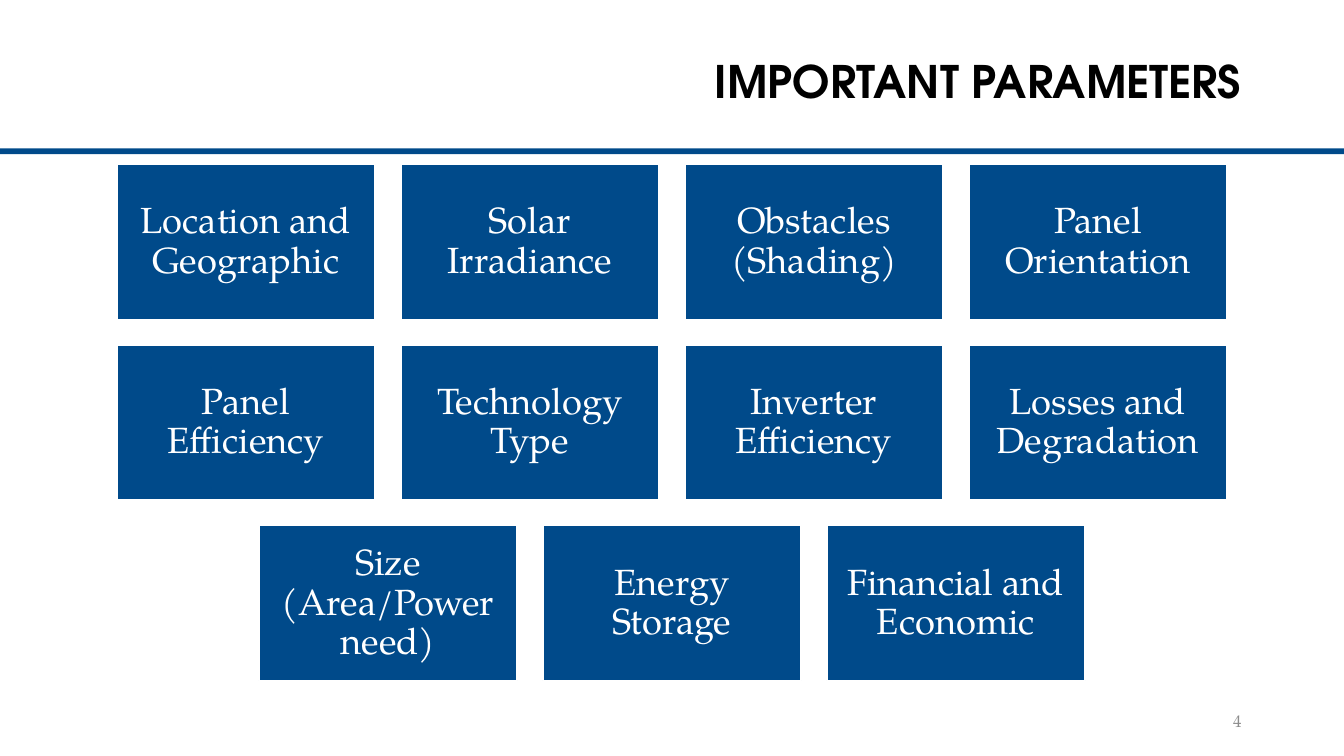
from pptx import Presentation
from pptx.dml.color import RGBColor
from pptx.enum.shapes import MSO_SHAPE as Shape
from pptx.enum.text import MSO_ANCHOR as Anchor, PP_ALIGN as Align
from pptx.util import Pt

NAVY = RGBColor(0x00, 0x4A, 0x8A)
WHITE = RGBColor(0xFF, 0xFF, 0xFF)
BLACK = RGBColor(0x00, 0x00, 0x00)
GRAY = RGBColor(0x8C, 0x8C, 0x8C)
HEADING_FONT = "TeX Gyre Adventor"
BODY_FONT = "TeX Gyre Pagella"

PAGE_WIDTH, PAGE_HEIGHT = 960, 540
TILE_WIDTH, TILE_HEIGHT, TILE_GAP = 184.44, 110.66, 18.44
PARAMETER_ROWS = [
    ["Location and Geographic", "Solar Irradiance",
     "Obstacles (Shading)", "Panel Orientation"],
    ["Panel Efficiency", "Technology Type",
     "Inverter Efficiency", "Losses and Degradation"],
    ["Size (Area/Power need)", "Energy Storage", "Financial and Economic"],
]


def write(shape, text, font, size, color, align, bold=False, spacing=None):
    frame = shape.text_frame
    frame.word_wrap = True
    frame.vertical_anchor = Anchor.MIDDLE
    para = frame.paragraphs[0]
    para.alignment = align
    para.line_spacing = spacing
    span = para.add_run()
    span.text = text
    span.font.name = font
    span.font.size = Pt(size)
    span.font.bold = bold
    span.font.color.rgb = color


def add_box(page, left, top, width, height):
    box = page.shapes.add_shape(Shape.RECTANGLE, Pt(left), Pt(top), Pt(width), Pt(height))
    box.shadow.inherit = False
    box.fill.solid()
    box.fill.fore_color.rgb = NAVY
    return box


def add_label(page, left, top, width, height, *style, **options):
    label = page.shapes.add_textbox(Pt(left), Pt(top), Pt(width), Pt(height))
    write(label, *style, **options)


def add_header(page, left, top, width, height):
    # Rule along the bottom of the header
    rule_height = 4.2
    rule = add_box(page, left, top + height - rule_height, width, rule_height)
    rule.line.fill.background()
    # Title
    add_label(page, left + 136, top + 28.8, width - 202, 62, "IMPORTANT PARAMETERS",
              HEADING_FONT, 32, BLACK, Align.RIGHT, bold=True, spacing=0.9)


def add_parameter_grid(page, left, top, width):
    for row, names in enumerate(PARAMETER_ROWS):
        # Each row is centred in the width
        row_width = len(names) * (TILE_WIDTH + TILE_GAP) - TILE_GAP
        row_left = left + (width - row_width) / 2
        tile_top = top + row * (TILE_HEIGHT + TILE_GAP)
        for column, name in enumerate(names):
            tile_left = row_left + column * (TILE_WIDTH + TILE_GAP)
            tile = add_box(page, tile_left, tile_top, TILE_WIDTH, TILE_HEIGHT)
            tile.line.color.rgb = WHITE
            tile.line.width = Pt(1)
            frame = tile.text_frame
            frame.margin_left = frame.margin_right = Pt(7.8)
            frame.margin_top = frame.margin_bottom = Pt(7.8)
            write(tile, name, BODY_FONT, 26, WHITE, Align.CENTER, spacing=0.9)


def add_page_number(page, left, top, width, height):
    add_label(page, left, top, width, height, "4", BODY_FONT, 12, GRAY, Align.RIGHT)


def main():
    deck = Presentation()
    deck.slide_width, deck.slide_height = Pt(PAGE_WIDTH), Pt(PAGE_HEIGHT)
    page = deck.slides.add_slide(deck.slide_layouts[6])
    add_header(page, 0, 0, PAGE_WIDTH, 110.2)
    add_parameter_grid(page, 0, 117.4, PAGE_WIDTH)
    add_page_number(page, 678, 500.6, 216, 28.8)
    deck.save("out.pptx")


if __name__ == "__main__":
    main()
